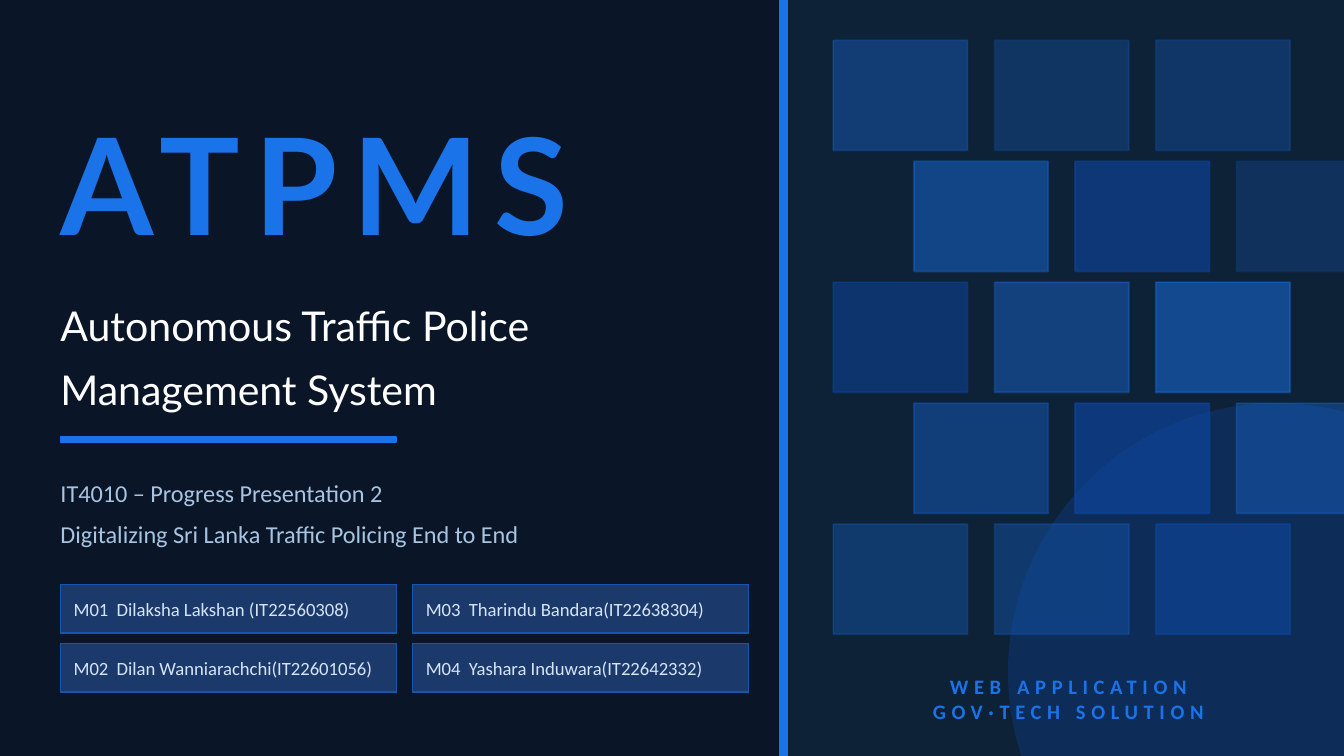
"""Build the ATPMS title slide."""
from pptx import Presentation
from pptx import util as u
from pptx.dml.color import RGBColor
from pptx.enum import shapes, text
from pptx.oxml import ns
from lxml import etree

hue = RGBColor.from_string
BLUE, MID, DEEP = "1A73E8", "1557B0", "0D47A1"
WIDE = 10
HIGH = WIDE * 9 / 16


def draw(kind, left, top, width, height, fill, line=None, weight=1, alpha=None):
    shape = slide.shapes.add_shape(
        kind, u.Inches(left), u.Inches(top), u.Inches(width), u.Inches(height))
    shape.shadow.inherit = False
    shape.fill.solid()
    shape.fill.fore_color.rgb = hue(fill)
    if line:
        shape.line.color.rgb = hue(line)
        shape.line.width = u.Pt(weight)
    else:
        shape.line.fill.background()
    if alpha:
        tints = shape._element.spPr.iter(ns.qn("a:srgbClr"))
        for tint, value in zip(tints, (alpha, alpha - 10)):
            etree.SubElement(tint, ns.qn("a:alpha"), val=str(value * 1000))
    return shape


def write(shape, words, face, size, color, bold=False, inset=0, track=0,
          space=None, tab=None, align=text.PP_ALIGN.LEFT):
    frame = shape.text_frame
    frame.word_wrap = True
    frame.vertical_anchor = text.MSO_ANCHOR.MIDDLE
    frame.margin_left = u.Inches(inset)
    frame.margin_right = frame.margin_top = frame.margin_bottom = 0
    frame.text = words
    for para in frame.paragraphs:
        para.alignment = align
        if space:
            para.line_spacing = space
        if tab:
            stops = etree.SubElement(para._p.get_or_add_pPr(), ns.qn("a:tabLst"))
            etree.SubElement(stops, ns.qn("a:tab"), pos=str(u.Inches(tab)), algn="l")
        for run in para.runs:
            run.font.name = face
            run.font.size = u.Pt(size)
            run.font.bold = bold
            run.font.color.rgb = hue(color)
            if track:
                run._r.get_or_add_rPr().set("spc", str(track * 100))


deck = Presentation()
deck.slide_width = u.Inches(WIDE)
deck.slide_height = u.Inches(HIGH)
slide = deck.slides.add_slide(deck.slide_layouts[6])
slide.background.fill.solid()
slide.background.fill.fore_color.rgb = hue("0D2137")

rect = shapes.MSO_SHAPE.RECTANGLE
draw(shapes.MSO_SHAPE.OVAL, 7.5, 3, 4, 4, DEEP, alpha=30)
draw(rect, 0, 0, 5.8, HIGH, "0A1628", "0A1628")
draw(rect, 5.8, 0, 0.06, HIGH, BLUE, BLUE)
draw(rect, 0.45, 3.25, 2.5, 0.04, BLUE, BLUE)

center = text.PP_ALIGN.CENTER
labels = [
    (0.45, 0.7, 5.1, 1.3, "ATPMS",
     dict(face="Lato", size=72, color=BLUE, bold=True, track=8)),
    (0.45, 2, 5.1, 1.2, "Autonomous Traffic Police\nManagement System",
     dict(face="Lato", size=22, color="FFFFFF", space=1.3)),
    (0.45, 3.35, 5.1, 0.85,
     "IT4010 – Progress Presentation 2\n"
     "Digitalizing Sri Lanka Traffic Policing End to End",
     dict(face="Calibri", size=13, color="A8C4E0", space=1.4)),
    (6.1, 4.9, 3.7, 0.6, "WEB APPLICATION\nGOV·TECH SOLUTION",
     dict(face="Calibri", size=11, color=BLUE, bold=True, track=3, align=center)),
]

team = ["Dilaksha Lakshan (IT22560308)", "Dilan Wanniarachchi(IT22601056)",
        "Tharindu Bandara(IT22638304)", "Yashara Induwara(IT22642332)"]
for i, name in enumerate(team):
    col, row = divmod(i, 2)
    card = draw(rect, 0.45 + 2.62 * col, 4.35 + 0.44 * row, 2.5, 0.36,
                "1B3A6B", MID, 0.75)
    write(card, f"M0{i + 1}\t{name}", "Calibri", 10, "D6E4F7", inset=0.1, tab=0.32)

tiles = [
    [(BLUE, 35), (BLUE, 25), (MID, 40)],
    [(BLUE, 45), (DEEP, 60), (MID, 30)],
    [(DEEP, 50), (BLUE, 40), (BLUE, 50)],
    [(MID, 55), (DEEP, 65), (BLUE, 35)],
    [(BLUE, 30), (MID, 45), (DEEP, 60)],
]
for row, line in enumerate(tiles):
    for col, (color, alpha) in enumerate(line):
        draw(rect, 6.2 + 0.6 * (row % 2) + 1.2 * col, 0.3 + 0.9 * row, 1, 0.82,
             color, color, alpha=alpha)

for left, top, width, height, words, style in labels:
    box = slide.shapes.add_textbox(
        u.Inches(left), u.Inches(top), u.Inches(width), u.Inches(height))
    write(box, words, **style)

deck.save("out.pptx")
